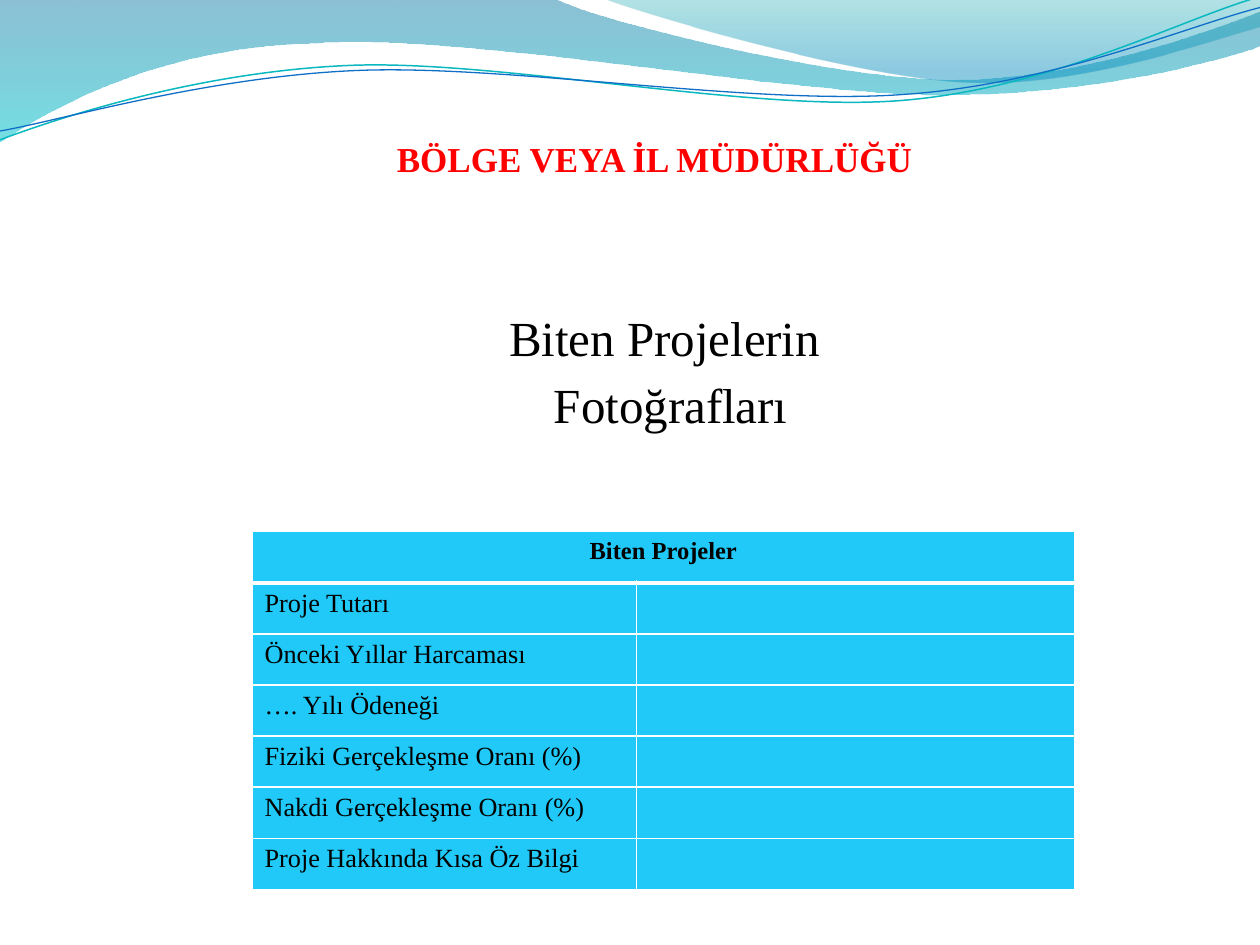
import lxml.etree
import pptx
import pptx.dml.color
import pptx.enum.text
import pptx.oxml
import pptx.oxml.ns
import pptx.util

FONT = "Times New Roman"
COLUMNS, ROWS = 10, 7.5
UNIT = pptx.util.Inches(1)
CENTER = pptx.enum.text.PP_ALIGN.CENTER
MIDDLE = pptx.enum.text.MSO_ANCHOR.MIDDLE
qn = pptx.oxml.ns.qn

BANDS = [
    ([(0, 0), (4.4, -0.01),
      (4.76, 0.17, 6.64, 0.63, 7.58, 0.63), (8.53, 0.63, 9.58, 0.26, 10, 0.09),
      (10.01, 0.36),
      (9.83, 0.44, 8.7, 0.76, 7.46, 0.75), (6.22, 0.75, 3.82, 0.28, 2.57, 0.34),
      (1.29, 0.36, 0.46, 0.83, -0.01, 1.13)],
     [(0, "0074A1", 45), (1, "00C6CF", 55)]),
    ([(4.79, -0.01),
      (5.09, 0.11, 6.82, 0.62, 7.69, 0.65), (8.56, 0.69, 9.61, 0.32, 10, 0.21),
      (10, 0)],
     [(0, "00A1A9", 30), (0.8, "008BBF", 45)]),
]
WAVES = [
    ([(0, 1.11), (0.48, 0.93, 1.58, 0.57, 2.77, 0.52),
      (3.95, 0.47, 5.93, 0.89, 7.13, 0.8), (8.33, 0.71, 9.38, 0.15, 9.98, -0.02)],
     "0AB8BF", 0.85),
    ([(0, 1.04), (0.47, 0.96, 1.64, 0.61, 2.83, 0.56),
      (4.03, 0.51, 5.97, 0.84, 7.17, 0.75), (8.36, 0.67, 9.41, 0.21, 10, 0.06)],
     "0F6FC6", 0.75),
]
LABELS = ["Proje Tutarı", "Önceki Yıllar Harcaması", "…. Yılı Ödeneği",
          "Fiziki Gerçekleşme Oranı (%)", "Nakdi Gerçekleşme Oranı (%)",
          "Proje Hakkında Kısa Öz Bilgi"]


def color(value):
    return pptx.dml.color.RGBColor.from_string(value)


def grid(*lengths):
    return [int(length * UNIT) for length in lengths]


def style(p, size, value="000000", bold=False, align=None):
    p.alignment = align
    for r in p.runs:
        r.font.name, r.font.size = FONT, pptx.util.Pt(size)
        r.font.bold, r.font.color.rgb = bold, color(value)


def add_outline(slide, segments, close):
    start, *rest = segments
    points = [grid(*segment[i:i + 2]) for segment in rest
              for i in range(0, len(segment), 2)]
    builder = slide.shapes.build_freeform(*grid(*start), scale=1.0)
    builder.add_line_segments(points, close=close)
    sp = builder.convert_to_shape()
    sp.shadow.inherit = False
    steps = iter(list(sp._element.iter(qn("a:lnTo"))))
    for segment in rest:
        curve = next(steps)
        if len(segment) == 6:
            curve.tag = qn("a:cubicBezTo")
            for _ in range(2):
                step = next(steps)
                curve.append(step[0])
                step.getparent().remove(step)
    return sp


def add_header(slide):
    for segments, stops in BANDS:
        sp = add_outline(slide, segments, True)
        sp.line.fill.background()
        sp.fill.gradient()
        sp.fill.gradient_angle = 270
        for stop, (position, value, _) in zip(sp.fill.gradient_stops, stops):
            stop.position, stop.color.rgb = position, color(value)
        for node, (_, _, opacity) in zip(sp._element.spPr.iter(qn("a:srgbClr")), stops):
            lxml.etree.SubElement(node, qn("a:alpha"), val=str(opacity * 1000))
    for segments, value, width in WAVES:
        sp = add_outline(slide, segments, False)
        sp.fill.background()
        sp.line.color.rgb, sp.line.width = color(value), pptx.util.Pt(width)


def fill_placeholder(slide, sp, box, lines, margins, **font):
    slide.shapes._spTree.append(sp._element)
    sp.left, sp.top, sp.width, sp.height = grid(*box)
    tf = sp.text_frame
    tf.text = "\n".join(lines)
    tf.word_wrap, tf.vertical_anchor = True, MIDDLE
    tf.auto_size = pptx.enum.text.MSO_AUTO_SIZE.NONE
    tf.margin_left, tf.margin_top, tf.margin_right, tf.margin_bottom = grid(*margins)
    for p in tf.paragraphs:
        style(p, align=CENTER, **font)
    return tf


def add_rule_below(cell, width):
    line = pptx.oxml.parse_xml(
        f'<a:lnB {pptx.oxml.ns.nsdecls("a")} w="{pptx.util.Pt(width)}">'
        '<a:solidFill><a:srgbClr val="FFFFFF"/></a:solidFill></a:lnB>')
    cell._tc.get_or_add_tcPr().insert(0, line)


def add_project_table(slide, box, split):
    rows = len(LABELS) + 1
    table = slide.shapes.add_table(rows, 2, *grid(*box)).table
    table.horz_banding = False
    for column, width in zip(table.columns, (split, box[2] - split)):
        column.width = grid(width)[0]
    for cell in table.iter_cells():
        cell.fill.solid()
        cell.fill.fore_color.rgb = color("20C9F8")
    for cell in table.rows[0].cells:
        add_rule_below(cell, 3)
    table.cell(0, 0).merge(table.cell(0, 1))
    for row, text in enumerate(["Biten Projeler"] + LABELS):
        tf = table.cell(row, 0).text_frame
        tf.text = text
        if row == 0:
            style(tf.paragraphs[0], 14, bold=True, align=CENTER)
        else:
            style(tf.paragraphs[0], 15)


def main():
    prs = pptx.Presentation()
    prs.slide_width, prs.slide_height = grid(COLUMNS, ROWS)
    slide = prs.slides.add_slide(prs.slide_layouts[2])
    title, body = slide.placeholders
    add_header(slide)
    fill_placeholder(slide, title, (1.93, 0.92, 6.53, 0.63),
                     ["BÖLGE VEYA İL MÜDÜRLÜĞÜ"], (0, 0.05, 0, 0),
                     size=20, value="FF0000", bold=True)
    add_project_table(slide, (2, 4.22, 6.53, 2.84), 3.05)
    tf = fill_placeholder(slide, body, (2.01, 2.18, 6.53, 1.97),
                          ["Biten Projelerin", " Fotoğrafları"],
                          (0.1, 0.05, 0.1, 0.5), size=28)
    for p in tf.paragraphs:
        p.space_before = pptx.util.Pt(5)
    prs.save("out.pptx")


if __name__ == "__main__":
    main()
